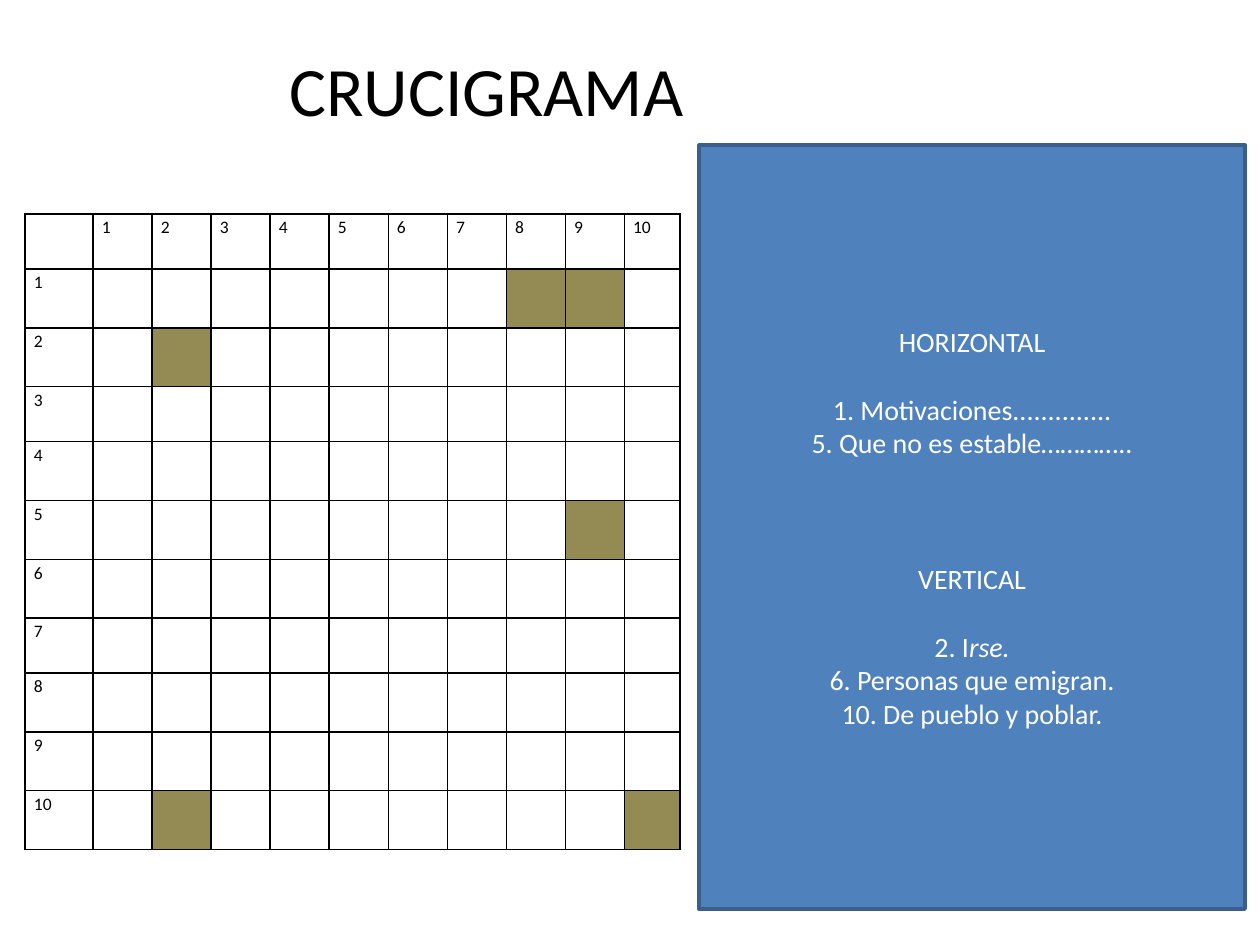
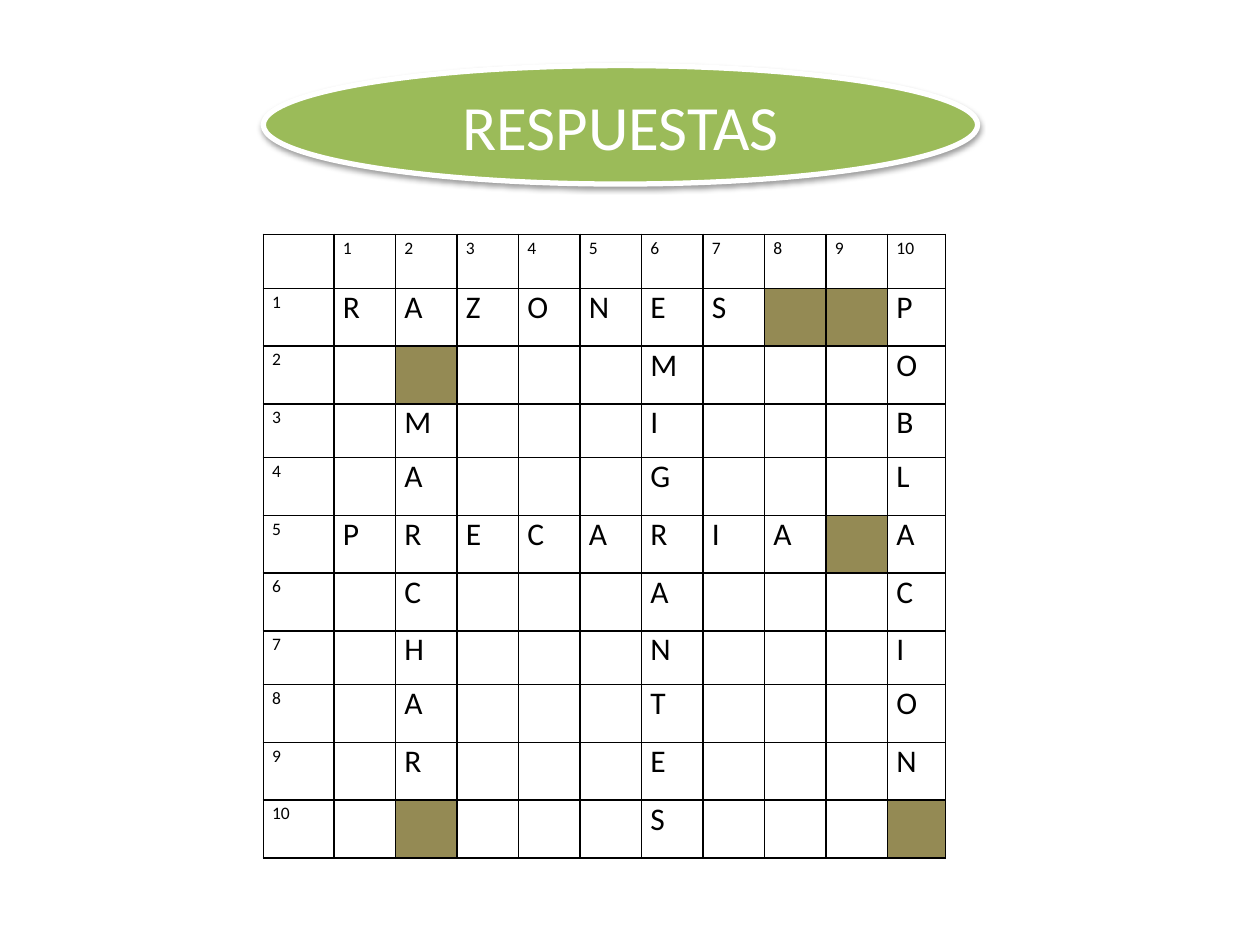
import pptx
import pptx.util
import pptx.dml.color
import pptx.enum.shapes
import pptx.enum.text
import pptx.oxml
import pptx.oxml.ns

Pt = pptx.util.Pt
FONT = "Calibri"
BLACK, WHITE = "000000", "FFFFFF"
BLUE, DARK_BLUE, GREEN, OLIVE = "4F81BD", "3A5F8C", "9BBB59", "948A54"
NS = pptx.oxml.ns.nsdecls("a")

# Sizes in units of one regular cell
COL_UNITS = [1.15] + [1] * 9 + [0.94]
ROW_UNITS = [0.935 if i in (0, 3, 7) else 1 for i in range(11)]
BLOCKED = {(1, 8), (1, 9), (2, 2), (5, 9), (10, 2), (10, 10)}
# Word, first row, first column
ACROSS = [("RAZONES", 1, 1), ("PRECARIA", 5, 1)]
DOWN = [("MARCHAR", 3, 2), ("EMIGRANTES", 1, 6), ("POBLACION", 1, 10)]
# Line of clues as runs, space before in points
CLUES = [
    (["HORIZONTAL"], 0),
    (["1. Motivaciones.............."], 19.5),
    (["5. Que no es estable………….."], 0),
    (["VERTICAL"], 58.5),
    (["2. I", "rse."], 19.5),
    (["6. Personas que emigran."], 0),
    (["10. De pueblo y poblar."], 0),
]


def rgb(hex_code):
    return pptx.dml.color.RGBColor.from_string(hex_code)


def add_text(p, text, size=16, color=WHITE, italic=False, align=None, spacing=None):
    r = p.add_run()
    r.text = text
    r.font.name, r.font.size, r.font.italic = FONT, Pt(size), italic
    r.font.color.rgb = rgb(color)
    if align:
        p.alignment = getattr(pptx.enum.text.PP_ALIGN, align)
    if spacing:
        p.line_spacing = spacing


def add_box(s, kind, box, fill, line, line_width):
    sp = s.shapes.add_shape(getattr(pptx.enum.shapes.MSO_SHAPE, kind), *map(Pt, box))
    sp.shadow.inherit = False
    sp.fill.solid()
    sp.fill.fore_color.rgb = rgb(fill)
    sp.line.color.rgb = rgb(line)
    sp.line.width = Pt(line_width)
    sp.text_frame.word_wrap = True
    sp.text_frame.vertical_anchor = pptx.enum.text.MSO_ANCHOR.MIDDLE
    return sp


def add_title(s, box, text):
    sp = s.shapes.title
    sp.left, sp.top, sp.width, sp.height = map(Pt, box)
    tf = sp.text_frame
    tf.vertical_anchor = pptx.enum.text.MSO_ANCHOR.MIDDLE
    add_text(tf.paragraphs[0], text, size=39.6, color=BLACK, align="CENTER")


def add_clues(s, box):
    tf = add_box(s, "RECTANGLE", box, BLUE, DARK_BLUE, 2).text_frame
    for i, (runs, gap) in enumerate(CLUES):
        p = tf.add_paragraph() if i else tf.paragraphs[0]
        p.space_before = Pt(gap)
        for j, text in enumerate(runs):
            add_text(p, text, italic=j > 0, align="CENTER")


def add_banner(s, box, text):
    """Oval heading with a soft shadow below it."""
    sp = add_box(s, "OVAL", box, GREEN, WHITE, 3)
    add_text(sp.text_frame.paragraphs[0], text, size=36, align="CENTER")
    effects = sp._element.spPr.find(pptx.oxml.ns.qn("a:effectLst"))
    effects.append(pptx.oxml.parse_xml(
        f'<a:outerShdw {NS} blurRad="{Pt(3.1)}" dist="{Pt(1.6)}" dir="5400000" rotWithShape="0">'
        f'<a:srgbClr val="{BLACK}"><a:alpha val="38000"/></a:srgbClr></a:outerShdw>'))


def format_cell(cell, fill):
    tcPr = cell._tc.get_or_add_tcPr()
    for side in "LRTB":
        tcPr.append(pptx.oxml.parse_xml(
            f'<a:ln{side} {NS} w="{Pt(1)}"><a:solidFill><a:srgbClr val="{BLACK}"/>'
            f'</a:solidFill></a:ln{side}>'))
    cell.fill.solid()
    cell.fill.fore_color.rgb = rgb(fill)
    cell.margin_left = cell.margin_right = Pt(5)
    cell.margin_top = cell.margin_bottom = 0


def solution_letters():
    """Map each (row, column) of the solved grid to its letter."""
    letters = {(row, col + i): c for word, row, col in ACROSS for i, c in enumerate(word)}
    letters.update({(row + i, col): c for word, row, col in DOWN for i, c in enumerate(word)})
    return letters


def add_crossword(s, box, letters):
    left, top, width, height = box
    rows, cols = len(ROW_UNITS), len(COL_UNITS)
    table = s.shapes.add_table(rows, cols, *map(Pt, box)).table
    table.first_row = table.horz_banding = False
    for col, units in zip(table.columns, COL_UNITS):
        col.width = Pt(width * units / sum(COL_UNITS))
    for row, units in zip(table.rows, ROW_UNITS):
        row.height = Pt(height * units / sum(ROW_UNITS))
    for i in range(rows):
        for j in range(cols):
            cell = table.cell(i, j)
            format_cell(cell, OLIVE if (i, j) in BLOCKED else WHITE)
            p = cell.text_frame.paragraphs[0]
            if (i == 0) != (j == 0):
                add_text(p, str(i + j), size=10, color=BLACK, spacing=1.15)
            elif (i, j) in letters:
                add_text(p, letters[i, j], size=18, color=BLACK)


def puzzle_slide(prs):
    s = prs.slides.add_slide(prs.slide_layouts.get_by_name("Title Only"))
    add_title(s, (70.5, 26, 415, 49.5), "CRUCIGRAMA")
    add_clues(s, (399.5, 83, 312, 436.5))
    add_crossword(s, (14.4, 122.4, 374.4, 363), {})


def answers_slide(prs):
    s = prs.slides.add_slide(prs.slide_layouts.get_by_name("Blank"))
    add_crossword(s, (150.5, 134, 390, 356.4), solution_letters())
    add_banner(s, (150.5, 37.5, 408.2, 67.7), "RESPUESTAS")


def main():
    prs = pptx.Presentation()
    prs.slide_width, prs.slide_height = Pt(720), Pt(540)
    puzzle_slide(prs)
    answers_slide(prs)
    prs.save("out.pptx")


if __name__ == "__main__":
    main()
